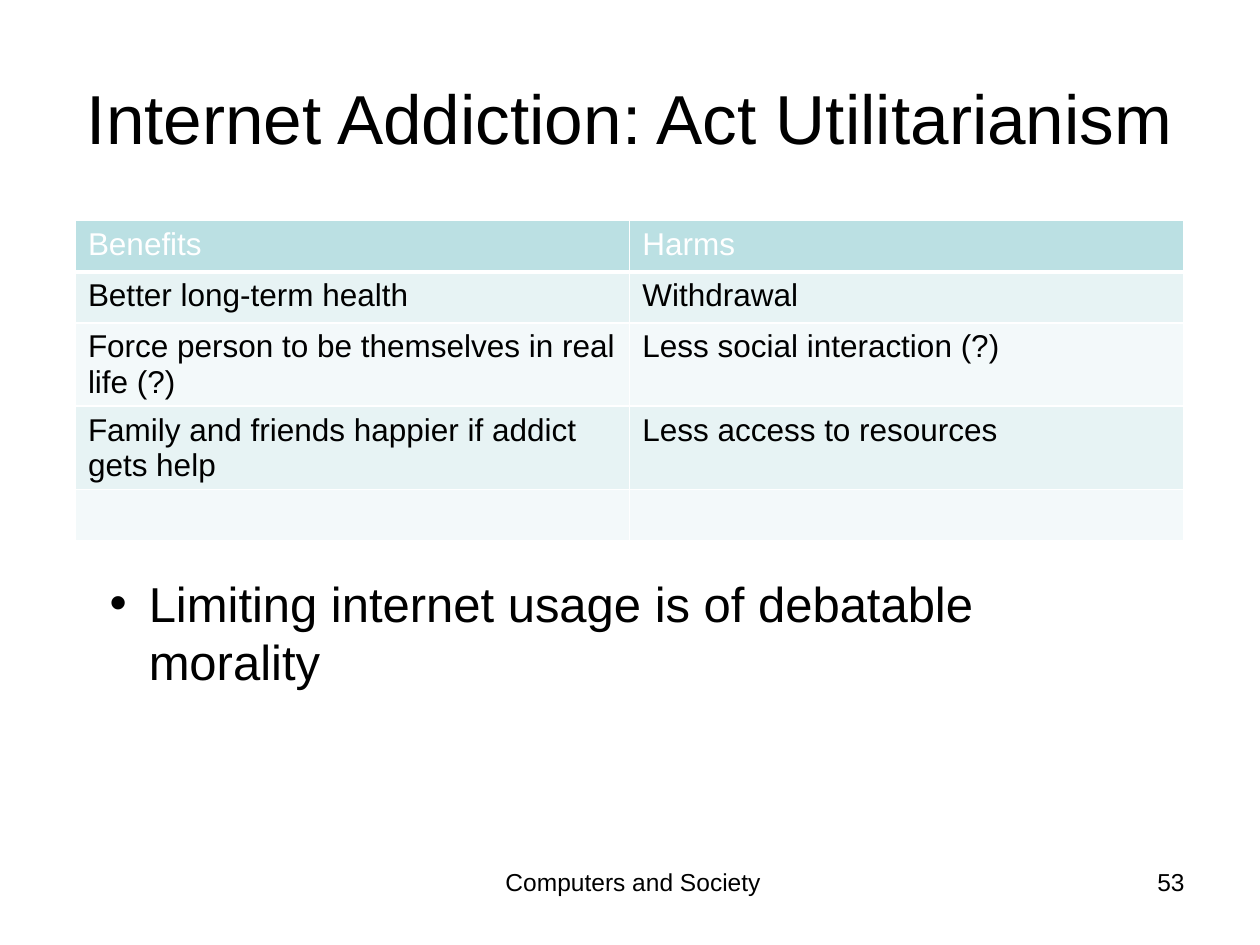
from pptx import Presentation
from pptx.dml.color import RGBColor
from pptx.enum.text import MSO_ANCHOR, MSO_AUTO_SIZE, PP_ALIGN
from pptx.oxml import parse_xml
from pptx.oxml.ns import nsdecls
from pptx.util import Cm, Pt

LEFT, CENTER, RIGHT = PP_ALIGN.LEFT, PP_ALIGN.CENTER, PP_ALIGN.RIGHT
MIDDLE = MSO_ANCHOR.MIDDLE
NO_FIT = MSO_AUTO_SIZE.NONE
BLACK = RGBColor(0x00, 0x00, 0x00)
WHITE = RGBColor(0xFF, 0xFF, 0xFF)
HEADER_FILL = RGBColor(0xBB, 0xE0, 0xE3)
BAND_FILLS = (RGBColor(0xF3, 0xF9, 0xFA), RGBColor(0xE7, 0xF3, 0xF4))
FONT = "Arial"

ROWS = [
    ("Benefits", "Harms"),
    ("Better long-term health", "Withdrawal"),
    ("Force person to be themselves in real life (?)", "Less social interaction (?)"),
    ("Family and friends happier if addict gets help", "Less access to resources"),
    ("", ""),
]


def style_paragraph(para, size, color=BLACK, align=LEFT):
    para.alignment = align
    para.font.name = FONT
    para.font.size = Pt(size)
    para.font.color.rgb = color


def set_title(page, text):
    title = page.shapes.title
    title.left, title.top, title.width, title.height = Cm(1.27), Cm(0.76), Cm(22.86), Cm(3.18)
    frame = title.text_frame
    frame.text = text
    frame.auto_size = NO_FIT
    frame.vertical_anchor = MIDDLE
    style_paragraph(frame.paragraphs[0], 39.6, align=CENTER)


def add_text(page, text, left, top, width, height, size, align=LEFT):
    box = page.shapes.add_textbox(Cm(left), Cm(top), Cm(width), Cm(height))
    box.text_frame.word_wrap = True
    para = box.text_frame.paragraphs[0]
    para.text = text
    style_paragraph(para, size, align=align)
    return para


def add_bullet(para):
    props = para._p.get_or_add_pPr()
    indent = Cm(0.79)
    props.set("marL", str(indent))
    props.set("indent", str(-indent))
    props.append(parse_xml(f'<a:buFont {nsdecls("a")} typeface="{FONT}"/>'))
    props.append(parse_xml(f'<a:buChar {nsdecls("a")} char="•"/>'))
    # Default run properties must follow the bullet
    props.append(props.find("{*}defRPr"))


def set_borders(cell, bottom, top):
    props = cell._tc.get_or_add_tcPr()
    widths = {"lnL": 1, "lnR": 1, "lnT": top, "lnB": bottom}
    for index, (side, width) in enumerate(widths.items()):
        props.insert(index, parse_xml(
            f'<a:{side} {nsdecls("a")} w="{Pt(width)}"><a:solidFill>'
            f'<a:srgbClr val="{WHITE}"/></a:solidFill></a:{side}>'))


def add_comparison_table(page, rows):
    row_height = Cm(1.03)
    frame = page.shapes.add_table(len(rows), len(rows[0]), Cm(1.52), Cm(4.45),
                                  Cm(22.35), row_height * len(rows))
    table = frame.table
    for index, texts in enumerate(rows):
        header = index == 0
        table.rows[index].height = row_height
        for column, text in enumerate(texts):
            cell = table.cell(index, column)
            cell.text = text
            style_paragraph(cell.text_frame.paragraphs[0], 18, WHITE if header else BLACK)
            cell.fill.solid()
            cell.fill.fore_color.rgb = HEADER_FILL if header else BAND_FILLS[index % 2]
            set_borders(cell, bottom=3 if header else 1, top=3 if index == 1 else 1)


def main():
    deck = Presentation()
    deck.slide_width, deck.slide_height = Cm(25.4), Cm(19.05)
    page = deck.slides.add_slide(deck.slide_layouts[5])

    # Title and comparison
    set_title(page, "Internet Addiction: Act Utilitarianism")
    add_comparison_table(page, ROWS)

    # Conclusion
    conclusion = add_text(page, "Limiting internet usage is of debatable morality",
                          1.96, 11.43, 19.96, 2.64, 28)
    add_bullet(conclusion)

    # Footer and page number
    add_text(page, "Computers and Society", 7.47, 17.35, 10.59, 1.32, 14, CENTER)
    add_text(page, "53", 18.21, 17.35, 5.92, 1.32, 14, RIGHT)

    deck.save("out.pptx")


if __name__ == "__main__":
    main()
